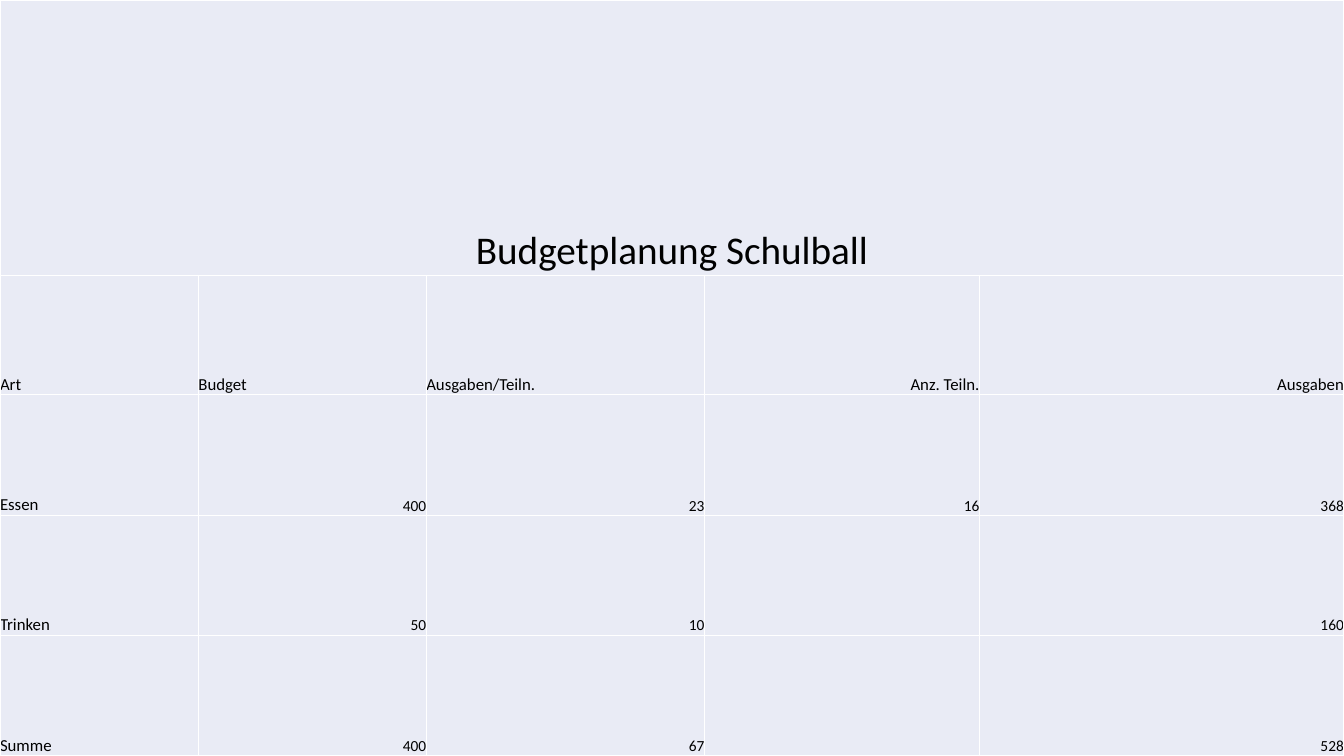
from lxml.etree import SubElement as Sub
from pptx import Presentation as Deck
from pptx.dml.color import RGBColor as Rgb
from pptx.enum.text import MSO_ANCHOR as Anchor, PP_ALIGN as Align
from pptx.oxml.ns import qn
from pptx.util import Pt

PX = 9144000 // 960  # EMU per px, 96 px to the inch
theme = {
    "font": "Calibri", "ink": "000000", "fill": "E9EBF5", "line": "FFFFFF",
    "title": 28, "label": 12, "value": 11,
}

deck = Deck()
deck.slide_width, deck.slide_height = 1280 * PX, 720 * PX
slide = deck.slides.add_slide(deck.slide_layouts[6])


def write(cell, text, size="label", align=Align.LEFT):
    para = cell.text_frame.paragraphs[0]
    para.alignment = align
    run = para.add_run()
    run.text = text
    font = run.font
    font.name, font.size = theme["font"], Pt(theme[size])
    font.color.rgb = Rgb.from_string(theme["ink"])


def frame(cell):
    props = cell._tc.get_or_add_tcPr()
    for side in ("lnL", "lnR", "lnT", "lnB"):
        line = Sub(props, qn("a:" + side), w=str(Pt(1)))
        Sub(Sub(line, qn("a:solidFill")), qn("a:srgbClr"), val=theme["line"])


# Budget figures
title = "Budgetplanung Schulball"
heads = ["Art", "Budget", "Ausgaben/Teiln.", "Anz. Teiln.", "Ausgaben"]
costs = [
    ["Essen", "400", "23", "16", "368"],
    ["Trinken", "50", "10", "", "160"],
    ["Summe", "400", "67", "", "528"],
]

# Table grid over the full slide
wide = [189, 217, 265, 262, 347]
high = [262, 114, 115, 114, 115]
grid = slide.shapes.add_table(
    len(high), len(wide), 0, 0, sum(wide) * PX, sum(high) * PX).table
grid.first_row = grid.horz_banding = False
for col, px in zip(grid.columns, wide):
    col.width = px * PX
for row, px in zip(grid.rows, high):
    row.height = px * PX

# Cell look
for cell in grid.iter_cells():
    frame(cell)
    cell.fill.solid()
    cell.fill.fore_color.rgb = Rgb.from_string(theme["fill"])
    cell.vertical_anchor = Anchor.BOTTOM
    cell.margin_left = cell.margin_right = 0
    cell.margin_top = cell.margin_bottom = 0

# Title across all columns
grid.cell(0, 0).merge(grid.cell(0, len(wide) - 1))
write(grid.cell(0, 0), title, size="title", align=Align.CENTER)

# Column heads: the last two sit right
for c, text in enumerate(heads):
    write(grid.cell(1, c), text, align=Align.RIGHT if c > 2 else Align.LEFT)

# Cost rows: a label, then numbers
for r, (label, *nums) in enumerate(costs, 2):
    write(grid.cell(r, 0), label)
    for c, num in enumerate(nums, 1):
        if num:
            write(grid.cell(r, c), num, size="value", align=Align.RIGHT)

deck.save("out.pptx")
